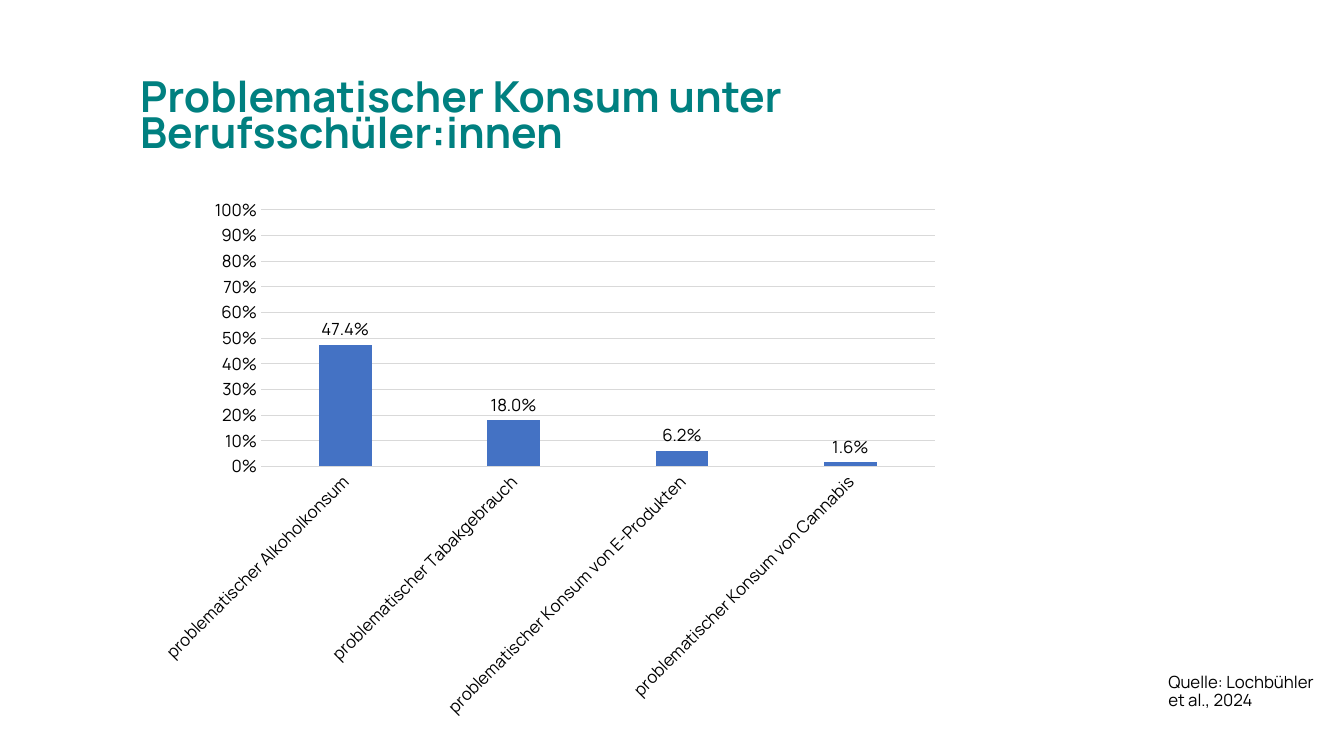
from pptx import Presentation
from pptx.chart.data import CategoryChartData
from pptx.dml.color import RGBColor
from pptx.enum.chart import XL_CHART_TYPE, XL_LABEL_POSITION, XL_TICK_MARK
from pptx.enum.text import MSO_ANCHOR, MSO_AUTO_SIZE, PP_ALIGN
from pptx.util import Pt

PX = 9144
FONT = "Manrope"
COLORS = {"title": "008080", "text": "000000", "bar": "4472C4", "grid": "D9D9D9"}
RATES = {
    "problematischer Alkoholkonsum": 0.474,
    "problematischer Tabakgebrauch": 0.18,
    "problematischer Konsum von E-Produkten": 0.062,
    "problematischer Konsum von Cannabis": 0.016,
}


def color(name):
    """Return the named colour."""
    return RGBColor.from_string(COLORS[name])


def style(font, size, name, face=FONT, bold=False):
    """Set size, colour, face and weight of a font."""
    font.size, font.name, font.bold = Pt(size), face, bold
    font.color.rgb = color(name)


def place(shape, left, top, width, height):
    """Move and size a shape in px."""
    shape.left, shape.top = left * PX, top * PX
    shape.width, shape.height = width * PX, height * PX


def write(frame, text, size, name, spacing, bold=False):
    """Write one left-aligned paragraph into a text frame."""
    frame.word_wrap = True
    para = frame.paragraphs[0]
    para.alignment = PP_ALIGN.LEFT
    para.line_spacing = spacing
    para.space_before = Pt(0)
    run = para.add_run()
    run.text = text
    style(run.font, size, name, bold=bold)


def add_title(slide, text):
    """Fill the title placeholder."""
    title = slide.shapes.title
    place(title, 129, 65, 938, 94)
    frame = title.text_frame
    frame.auto_size = MSO_AUTO_SIZE.NONE
    frame.vertical_anchor = MSO_ANCHOR.BOTTOM
    write(frame, text, 30.5, "title", 0.7, bold=True)


def add_source(slide, text):
    """Add the source note."""
    box = slide.shapes.add_textbox(0, 0, 0, 0)
    place(box, 1149, 664, 174, 50)
    write(box.text_frame, text, 12, "text", 0.9)
    box.text_frame.auto_size = MSO_AUTO_SIZE.SHAPE_TO_FIT_TEXT


def style_axis(axis):
    """Set the looks that both axes share."""
    axis.major_tick_mark = axis.minor_tick_mark = XL_TICK_MARK.NONE
    style(axis.tick_labels.font, 12, "text")


def rule(line):
    """Draw a thin grey line."""
    line.color.rgb = color("grid")
    line.width = Pt(0.75)


def add_bars(slide, rates):
    """Add the column chart of rates."""
    data = CategoryChartData(number_format="0.0%")
    data.categories = list(rates)
    data.add_series("Series 1", list(rates.values()))
    box = [n * PX for n in (143, 186, 800, 537)]
    chart = slide.shapes.add_chart(XL_CHART_TYPE.COLUMN_CLUSTERED, *box, data).chart
    chart.has_legend = chart.has_title = False
    style(chart.font, 10, "text", "Calibri")

    cats, vals = chart.category_axis, chart.value_axis
    style_axis(cats)
    rule(cats.format.line)
    cats.tick_labels.font
    cats._element.txPr.bodyPr.set("rot", "-2700000")

    style_axis(vals)
    vals.minimum_scale, vals.maximum_scale, vals.major_unit = 0, 1, 0.1
    vals.format.line.fill.background()
    rule(vals.major_gridlines.format.line)
    vals.tick_labels.number_format = "0%"
    vals.tick_labels.number_format_is_linked = False

    plot = chart.plots[0]
    plot.gap_width, plot.overlap = 219, -27
    plot.vary_by_categories = False
    bars = plot.series[0]
    bars.format.fill.solid()
    bars.format.fill.fore_color.rgb = color("bar")
    labels = bars.data_labels
    labels.show_value = True
    labels.position = XL_LABEL_POSITION.OUTSIDE_END
    labels.number_format = "0.0%"
    labels.number_format_is_linked = False
    style(labels.font, 12, "text")


def main():
    """Build and save the slide."""
    deck = Presentation()
    deck.slide_width, deck.slide_height = 1333 * PX, 750 * PX
    slide = deck.slides.add_slide(deck.slide_layouts[5])
    add_title(slide, "Problematischer Konsum unter Berufsschüler:innen")
    add_source(slide, "Quelle: Lochbühler et al., 2024")
    add_bars(slide, RATES)
    deck.save("out.pptx")


if __name__ == "__main__":
    main()
